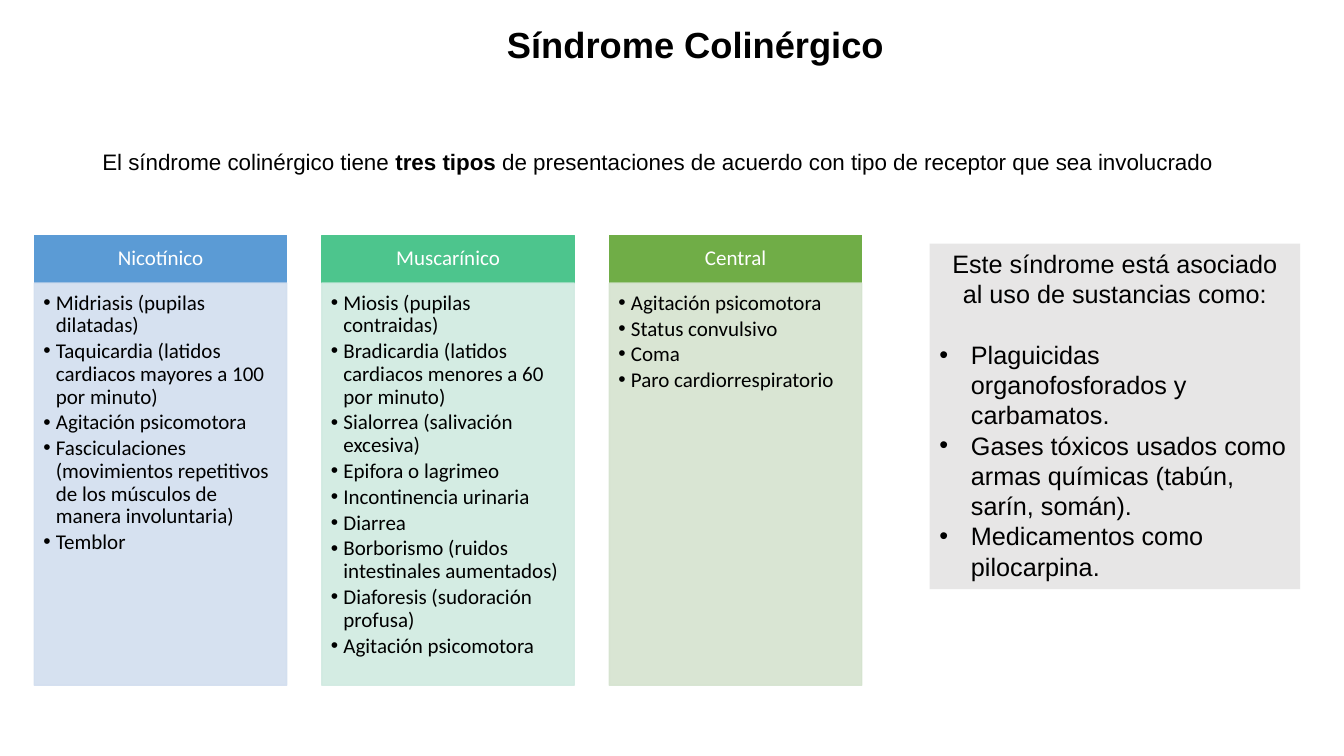
from lxml.etree import SubElement
from pptx import Presentation
from pptx.dml.color import RGBColor
from pptx.enum.shapes import MSO_SHAPE
from pptx.enum.text import MSO_ANCHOR, MSO_AUTO_SIZE, PP_ALIGN
from pptx.oxml.ns import qn
from pptx.util import Pt

COLORS = {
    "text": "000000", "header_text": "FFFFFF", "panel": "E7E6E6",
    "blue": "5B9BD5", "pale_blue": "D2DEEF",
    "teal": "4DC58D", "pale_teal": "D0EAE1",
    "green": "70AD47", "pale_green": "D5E3CF",
}
TITLE = "Síndrome Colinérgico"
INTRO = [
    ("El síndrome colinérgico tiene ", False),
    ("tres tipos ", True),
    ("de presentaciones de acuerdo con tipo de receptor que sea involucrado", False),
]
RECEPTORS = [
    ("Nicotínico", "blue", [
        "Midriasis (pupilas dilatadas)",
        "Taquicardia (latidos cardiacos mayores a 100 por minuto)",
        "Agitación psicomotora",
        "Fasciculaciones (movimientos repetitivos de los músculos de manera involuntaria)",
        "Temblor",
    ]),
    ("Muscarínico", "teal", [
        "Miosis (pupilas contraidas)",
        "Bradicardia (latidos cardiacos menores a 60 por minuto)",
        "Sialorrea (salivación excesiva)",
        "Epifora o lagrimeo",
        "Incontinencia urinaria",
        "Diarrea",
        "Borborismo (ruidos intestinales aumentados)",
        "Diaforesis (sudoración profusa)",
        "Agitación psicomotora",
    ]),
    ("Central", "green", [
        "Agitación psicomotora",
        "Status convulsivo",
        "Coma",
        "Paro cardiorrespiratorio",
    ]),
]
SUBSTANCES_LEAD = "Este síndrome está asociado al uso de sustancias como:"
SUBSTANCES = [
    "Plaguicidas organofosforados y carbamatos.",
    "Gases tóxicos usados como armas químicas (tabún, sarín, somán).",
    "Medicamentos como pilocarpina.",
]

COLUMN_LEFT, COLUMN_WIDTH, COLUMN_STEP = 24.5, 180.3, 205.4
HEADER_TOP, HEADER_HEIGHT, LIST_HEIGHT = 168, 34.2, 287.3
PANEL_LINE = 21.6


def rgb(name):
    return RGBColor.from_string(COLORS[name])


def prepare_frame(shape, anchor, insets=(7.2, 3.6, 7.2, 3.6)):
    frame = shape.text_frame
    frame.word_wrap = True
    frame.auto_size = MSO_AUTO_SIZE.NONE
    frame.vertical_anchor = anchor
    (frame.margin_left, frame.margin_top,
     frame.margin_right, frame.margin_bottom) = [Pt(inset) for inset in insets]
    return frame


def add_block(page, place, color, outlined=True, opacity=100):
    block = page.shapes.add_shape(MSO_SHAPE.RECTANGLE, *[Pt(length) for length in place])
    block.shadow.inherit = False
    block.fill.solid()
    block.fill.fore_color.rgb = rgb(color)
    if outlined:
        block.line.color.rgb = rgb(color)
        block.line.width = Pt(1)
    else:
        block.line.fill.background()
    if opacity < 100:
        for color_node in block._element.spPr.iter(qn("a:srgbClr")):
            SubElement(color_node, qn("a:alpha")).set("val", str(opacity * 1000))
    return block


def next_para(frame):
    """Return the empty first paragraph, or add one after the existing text."""
    first = frame.paragraphs[0]
    return frame.add_paragraph() if first.runs else first


def add_span(para, text, size, font="Arial", color="text", bold=False):
    span = para.add_run()
    span.text = text
    span.font.name = font
    span.font.size = Pt(size)
    span.font.bold = bold
    span.font.color.rgb = rgb(color)


def add_bullet_para(frame, indent):
    para = next_para(frame)
    properties = para._p.get_or_add_pPr()
    properties.set("marL", str(Pt(indent)))
    properties.set("indent", str(-Pt(indent)))
    SubElement(properties, qn("a:buFont")).set("typeface", "Arial")
    SubElement(properties, qn("a:buChar")).set("char", "•")
    para.alignment = PP_ALIGN.LEFT
    return para


def add_heading(page):
    title = page.shapes.title
    title.left, title.top, title.width, title.height = Pt(82.8), Pt(18), Pt(828), Pt(33.1)
    para = prepare_frame(title, MSO_ANCHOR.MIDDLE).paragraphs[0]
    para.alignment, para.line_spacing = PP_ALIGN.CENTER, 0.8
    add_span(para, TITLE, 25.9, bold=True)

    intro = page.shapes.add_textbox(Pt(66), Pt(62), Pt(828), Pt(108.7))
    para = prepare_frame(intro, MSO_ANCHOR.MIDDLE).paragraphs[0]
    para.alignment, para.line_spacing = PP_ALIGN.JUSTIFY, 0.9
    for text, bold in INTRO:
        add_span(para, text, 16, bold=bold)


def add_receptor(page, left, name, color, signs):
    header = add_block(page, (left, HEADER_TOP, COLUMN_WIDTH, HEADER_HEIGHT), color)
    para = prepare_frame(header, MSO_ANCHOR.MIDDLE, (8.4, 4.8, 8.4, 4.8)).paragraphs[0]
    para.alignment, para.line_spacing = PP_ALIGN.CENTER, 0.9
    add_span(para, name, 15, "Calibri", "header_text")

    place = (left, HEADER_TOP + HEADER_HEIGHT, COLUMN_WIDTH, LIST_HEIGHT)
    body = add_block(page, place, f"pale_{color}", opacity=90)
    frame = prepare_frame(body, MSO_ANCHOR.TOP, (6.4, 6.4, 8.5, 9.6))
    for sign in signs:
        para = add_bullet_para(frame, 9)
        para.line_spacing, para.space_after = 0.9, Pt(2.25)
        add_span(para, sign, 15, "Calibri")


def add_substances(page):
    panel = add_block(page, (664, 174, 264.7, 246.8), "panel", outlined=False)
    frame = prepare_frame(panel, MSO_ANCHOR.TOP)
    para = next_para(frame)
    para.alignment, para.line_spacing = PP_ALIGN.CENTER, Pt(PANEL_LINE)
    add_span(para, SUBSTANCES_LEAD, 18)
    for position, substance in enumerate(SUBSTANCES):
        para = add_bullet_para(frame, 22.5)
        para.line_spacing = Pt(PANEL_LINE)
        para.space_before = Pt(0 if position else PANEL_LINE)
        add_span(para, substance, 18)


def main():
    deck = Presentation()
    deck.slide_width, deck.slide_height = Pt(960), Pt(540)
    page = deck.slides.add_slide(deck.slide_layouts[5])
    add_heading(page)
    for column, receptor in enumerate(RECEPTORS):
        add_receptor(page, COLUMN_LEFT + column * COLUMN_STEP, *receptor)
    add_substances(page)
    deck.save("out.pptx")


if __name__ == "__main__":
    main()
